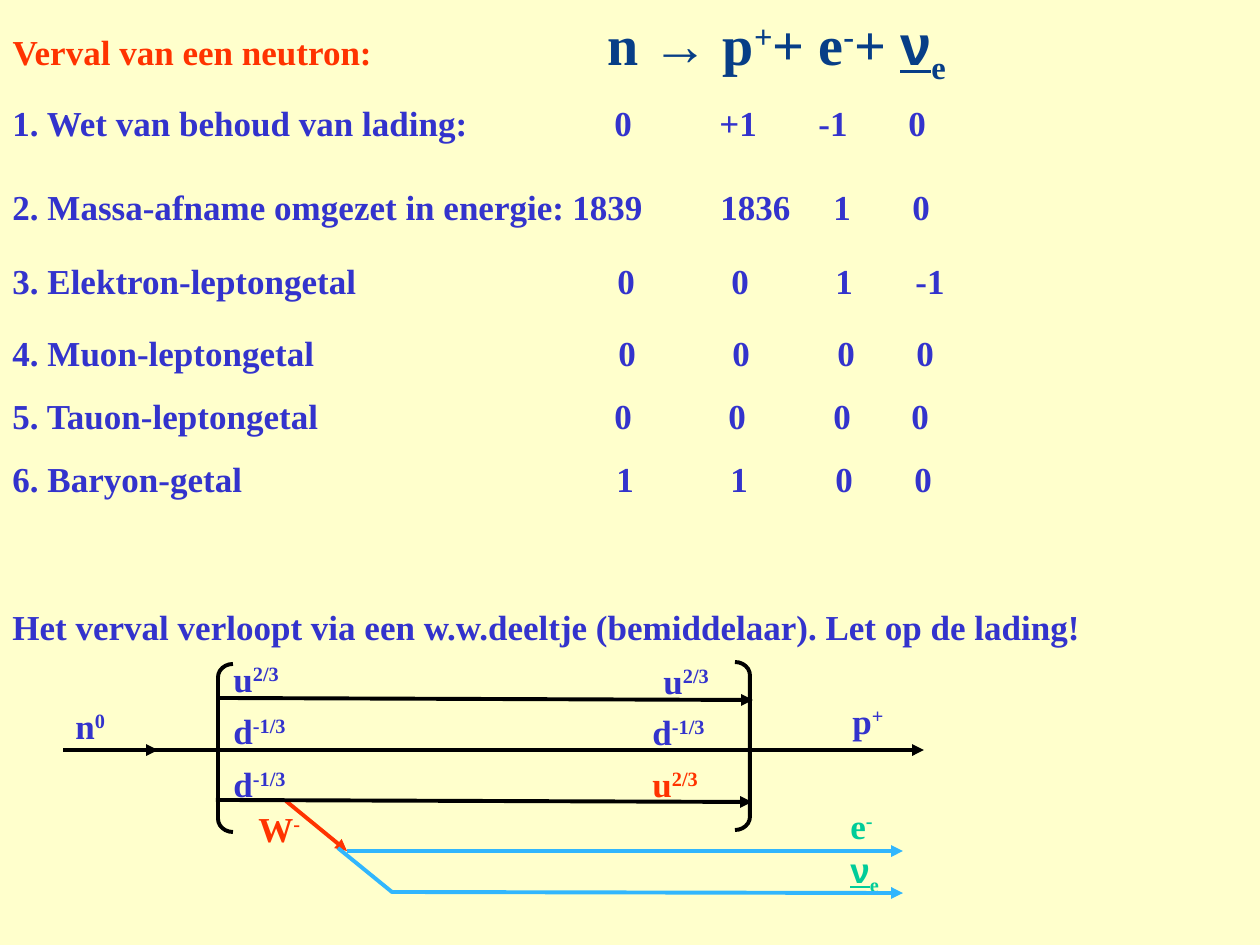
import pptx
import pptx.util
import pptx.dml.color
import pptx.enum.shapes
import pptx.enum.text
import pptx.oxml.ns
import lxml.etree

RGBColor = pptx.dml.color.RGBColor
CREAM = RGBColor(0xFF, 0xFF, 0xCC)
BLUE = RGBColor(0x33, 0x33, 0xCC)
RED = RGBColor(0xFF, 0x33, 0x00)
NAVY = RGBColor(0x07, 0x3E, 0x87)
GREEN = RGBColor(0x00, 0xCC, 0x99)
SKY = RGBColor(0x31, 0xB6, 0xFD)
BLACK = RGBColor(0, 0, 0)

SERIF = "Times New Roman"
SUPER, SUB = 30, -25
INSET = 13
LINE_HEIGHT = 54
MSO_SHAPE = pptx.enum.shapes.MSO_SHAPE
qn = pptx.oxml.ns.qn

ROWS = [
    (95, "1. Wet van behoud van lading:", ["0", "+1", "-1", "0"], [615, 720, 819, 909]),
    (179, "2. Massa-afname omgezet in energie:", ["1839", "1836", "1", "0"], [573, 721, 834, 913]),
    (253, "3. Elektron-leptongetal", ["0", "0", "1", "-1"], [618, 732, 836, 916]),
    (325, "4. Muon-leptongetal", ["0", "0", "0", "0"], [619, 733, 838, 917]),
    (388, "5. Tauon-leptongetal", ["0", "0", "0", "0"], [615, 729, 834, 912]),
    (451, "6. Baryon-getal", ["1", "1", "0", "0"], [617, 731, 836, 915]),
]

QUARK_LABELS = [
    (0, 47, 73, "n", "0", BLUE),
    (158, 0, 95, "u", "2/3", BLUE),
    (158, 52, 90, "d", "-1/3", BLUE),
    (158, 105, 95, "d", "-1/3", BLUE),
    (588, 2, 95, "u", "2/3", BLUE),
    (577, 53, 105, "d", "-1/3", BLUE),
    (577, 105, 90, "u", "2/3", RED),
    (777, 42, 73, "p", "+", BLUE),
    (183, 150, 95, "W", "-", RED),
    (775, 147, 63, "e", "-", GREEN),
]

ARROWS = [
    (223, 150, 284, 200, RED),
    (284, 200, 840, 200, SKY),
    (0, 99, 861, 99, BLACK),
    (153, 149, 689, 151, BLACK),
    (154, 47, 690, 49, BLACK),
    (10, 99, 95, 99, BLACK),
]

NEUTRINO_TRACK = [(275, 197), (329, 241), (840, 242)]

BRACKETS = [
    (MSO_SHAPE.RIGHT_BRACKET, 672, 11),
    (MSO_SHAPE.LEFT_BRACKET, 155, 13),
]


def px(length):
    return pptx.util.Emu(round(length * 914400 / 126))


def add_span(para, text, color, size=20, baseline=0, font=SERIF, underline=False):
    span = para.add_run()
    span.text = text
    span.font.name = font
    span.font.size = pptx.util.Pt(size)
    span.font.bold = True
    span.font.underline = underline
    span.font.color.rgb = color
    if baseline:
        span.font._element.set("baseline", str(baseline * 1000))


def set_tabs(para, positions):
    tabs = lxml.etree.SubElement(para._p.get_or_add_pPr(), qn("a:tabLst"))
    for position in positions:
        lxml.etree.SubElement(tabs, qn("a:tab"), pos=str(px(position - INSET)), algn="l")


def add_para_box(page, left, top, width):
    box = page.shapes.add_textbox(px(left), px(top), px(width), px(LINE_HEIGHT))
    box.text_frame.word_wrap = True
    return box.text_frame.paragraphs[0]


def style_line(shape, color):
    shape.line.color.rgb = color
    shape.line.width = pptx.util.Pt(2.25)


def add_arrowhead(shape):
    lxml.etree.SubElement(shape.line._get_or_add_ln(), qn("a:tailEnd"), type="triangle")


def add_title(page, left, top, width, height):
    title = page.shapes.title
    title.left, title.top = px(left), px(top)
    title.width, title.height = px(width), px(height)
    title.text_frame.vertical_anchor = pptx.enum.text.MSO_ANCHOR.MIDDLE
    para = title.text_frame.paragraphs[0]
    para.alignment = pptx.enum.text.PP_ALIGN.LEFT
    set_tabs(para, [608])
    add_span(para, "Verval van een neutron:\t", RED)
    for text, baseline in [("n → p", 0), ("+", SUPER), ("+ e", 0), ("-", SUPER), ("+ ", 0)]:
        add_span(para, text, NAVY, 32, baseline)
    add_span(para, "ν", NAVY, 32, font="Arial", underline=True)
    add_span(para, "e", NAVY, 32, SUB)


def add_conservation_laws(page, left, top, width):
    for offset, label, values, columns in ROWS:
        para = add_para_box(page, left, top + offset, width)
        set_tabs(para, columns)
        add_span(para, "\t".join([label, *values]), BLUE)


def add_decay_diagram(page, left, top):
    for x, y, width, symbol, charge, color in QUARK_LABELS:
        para = add_para_box(page, left + x, top + y, width)
        add_span(para, symbol, color)
        add_span(para, charge, color, baseline=SUPER)

    para = add_para_box(page, left + 775, top + 191, 63)
    add_span(para, "ν", GREEN, font="Arial", underline=True)
    add_span(para, "e", GREEN, baseline=SUB)

    for x1, y1, x2, y2, color in ARROWS:
        arrow = page.shapes.add_connector(
            pptx.enum.shapes.MSO_CONNECTOR.STRAIGHT,
            px(left + x1), px(top + y1), px(left + x2), px(top + y2))
        style_line(arrow, color)
        add_arrowhead(arrow)
        lxml.etree.SubElement(arrow._element.spPr, qn("a:effectLst"))

    start, *rest = [(px(left + x), px(top + y)) for x, y in NEUTRINO_TRACK]
    builder = page.shapes.build_freeform(*start)
    builder.add_line_segments(rest, close=False)
    track = builder.convert_to_shape()
    track.shadow.inherit = False
    track.fill.background()
    style_line(track, SKY)
    add_arrowhead(track)

    for kind, x, y in BRACKETS:
        bracket = page.shapes.add_shape(kind, px(left + x), px(top + y), px(15), px(168))
        bracket.adjustments[0] = 0.89
        bracket.shadow.inherit = False
        bracket.fill.background()
        style_line(bracket, BLACK)


def main():
    deck = pptx.Presentation()
    deck.slide_width, deck.slide_height = px(1260), px(945)
    page = deck.slides.add_slide(deck.slide_layouts[5])
    page.background.fill.solid()
    page.background.fill.fore_color.rgb = CREAM
    add_title(page, 0, 0, 1260, 95)
    add_conservation_laws(page, 0, 0, 1176)
    statement = add_para_box(page, 0, 599, 1176)
    add_span(statement, "Het verval verloopt via een w.w.deeltje (bemiddelaar). Let op de lading!", BLUE)
    add_decay_diagram(page, 63, 651)
    deck.save("out.pptx")


if __name__ == "__main__":
    main()
